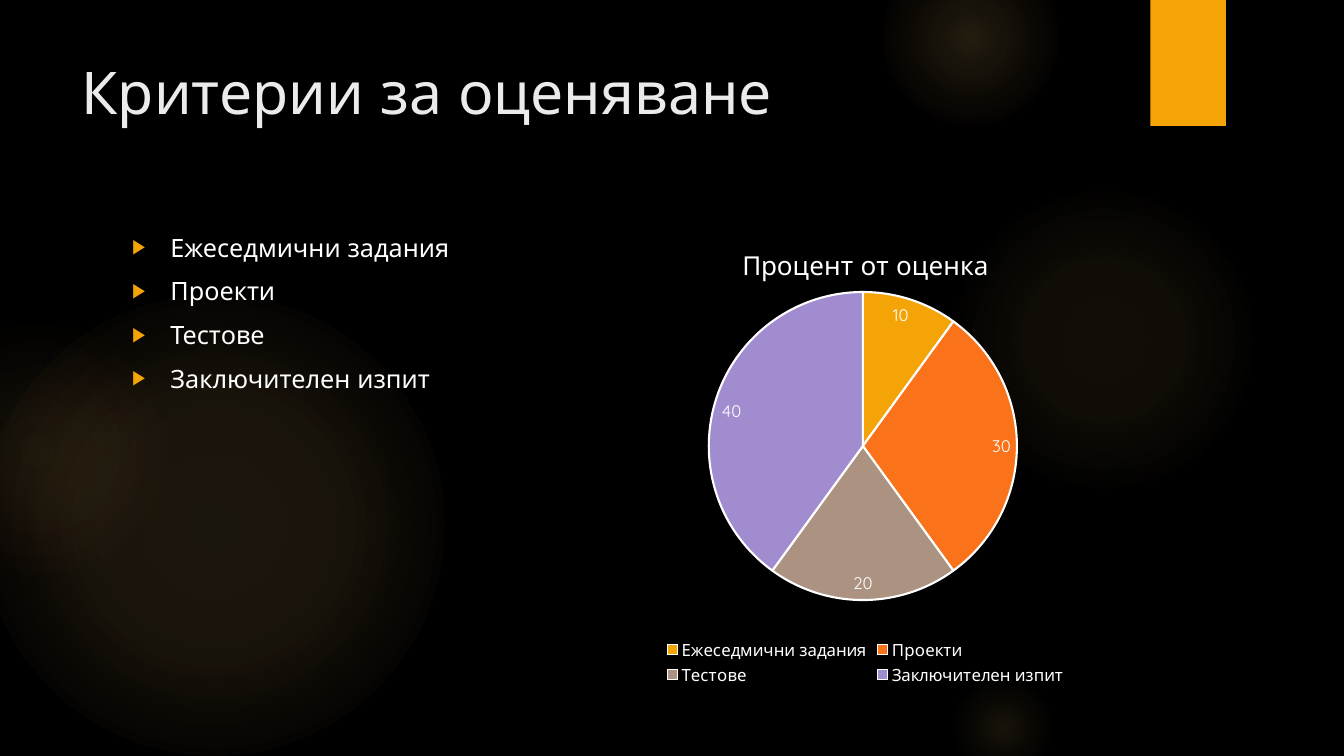
from dataclasses import dataclass
from typing import Any

from pptx import Presentation
from pptx import util as u
from pptx.chart.data import CategoryChartData
from pptx.dml.color import RGBColor
from pptx.enum import chart as charts, shapes, text
from pptx.oxml import parse_xml
from pptx.oxml.ns import nsdecls, qn

FONT = "Quicksand"
AMBER, GLOW, PEACH, WHITE = "F5A408", "FAC96A", "F59B74", "FFFFFF"
HEADING = "Процент от оценка"


@dataclass(frozen=True)
class Halo:
    left: float
    top: float
    size: float
    centre_alpha: int
    middle: int
    middle_alpha: int
    edge: int
    edge_colour: str = GLOW


@dataclass(frozen=True)
class Criterion:
    name: str
    percent: int
    colour: str


HALOS = [
    Halo(-0.17, 2.92, 4.58, 11, 36, 10, 75),
    Halo(-0.92, 3.17, 2.58, 8, 36, 5, 71, PEACH),
    Halo(9.41, 1.83, 3.08, 7, 36, 6, 69),
    Halo(8.75, -0.5, 1.75, 14, 36, 7, 73),
    Halo(9.41, 6.67, 1.08, 10, 31, 5, 66),
]
CRITERIA = [
    Criterion("Ежеседмични задания", 10, AMBER),
    Criterion("Проекти", 30, "FA731A"),
    Criterion("Тестове", 20, "AB9281"),
    Criterion("Заключителен изпит", 40, "A18CD0"),
]


def set_values(target: Any, values: dict[str, Any]) -> None:
    for name, value in values.items():
        setattr(target, name, value)


def paint(fill: Any, colour: str) -> None:
    fill.solid()
    fill.fore_color.rgb = RGBColor.from_string(colour)


def style_font(font: Any, size: float, colour: str = WHITE) -> None:
    set_values(font, {"name": FONT, "size": u.Pt(size), "bold": False})
    paint(font.fill, colour)


def place(left: float, top: float, width: float, height: float) -> dict[str, Any]:
    sides = {"left": left, "top": top, "width": width, "height": height}
    return {name: u.Inches(value) for name, value in sides.items()}


def add_backdrop(page: Any, kind: Any, box: dict[str, Any], colour: str) -> Any:
    shape = page.shapes.add_shape(kind, **box)
    shape.shadow.inherit = False
    shape.line.fill.background()
    paint(shape.fill, colour)
    page.shapes.title.element.addprevious(shape.element)
    return shape


def add_halo(page: Any, halo: Halo) -> None:
    box = place(halo.left, halo.top, halo.size, halo.size)
    shape = add_backdrop(page, shapes.MSO_SHAPE.OVAL, box, GLOW)
    stops = [
        (0, GLOW, halo.centre_alpha),
        (halo.middle, GLOW, halo.middle_alpha),
        (halo.edge, halo.edge_colour, 0),
    ]
    stop_xml = "".join(
        f'<a:gs pos="{position * 1000}"><a:srgbClr val="{colour}">'
        f'<a:alpha val="{alpha * 1000}"/></a:srgbClr></a:gs>'
        for position, colour, alpha in stops
    )
    gradient = parse_xml(
        f'<a:gradFill {nsdecls("a")} rotWithShape="1"><a:gsLst>{stop_xml}</a:gsLst>'
        '<a:path path="circle"><a:fillToRect l="50000" t="50000" r="50000" b="50000"/>'
        "</a:path></a:gradFill>"
    )
    properties = shape.element.spPr
    properties.replace(properties.find(qn("a:solidFill")), gradient)


def add_ribbon(page: Any) -> None:
    box = place(11.41, 0, 0.75, 1.25)
    ribbon = add_backdrop(page, shapes.MSO_SHAPE.RECTANGLE, box, AMBER)
    ribbon.element.spPr.find(qn("a:effectLst")).append(parse_xml(
        f'<a:outerShdw {nsdecls("a")} blurRad="{u.Pt(3)}" dist="{u.Pt(2)}" dir="5400000">'
        '<a:srgbClr val="000000"><a:alpha val="45000"/></a:srgbClr></a:outerShdw>'
    ))


def fill_placeholder(box: Any, area: dict[str, Any], lines: list[str], size: float,
                     colour: str, space_after: float) -> None:
    set_values(box, area)
    frame = box.text_frame
    frame.text = "\n".join(lines)
    set_values(frame, {
        "word_wrap": True,
        "auto_size": text.MSO_AUTO_SIZE.NONE,
        "vertical_anchor": text.MSO_ANCHOR.TOP,
    })
    for para in frame.paragraphs:
        set_values(para, {"alignment": text.PP_ALIGN.LEFT, "space_after": u.Pt(space_after)})
        for span in para.runs:
            style_font(span.font, size, colour)


def add_bullets(box: Any) -> None:
    indent = u.Inches(0.38)
    for properties in box.element.iter(qn("a:pPr")):
        properties.set("marL", str(indent))
        properties.set("indent", str(-indent))
        for markup in (
            f'<a:buClr {nsdecls("a")}><a:srgbClr val="{AMBER}"/></a:buClr>',
            f'<a:buSzPct {nsdecls("a")} val="80000"/>',
            f'<a:buFont {nsdecls("a")} typeface="Arial"/>',
            f'<a:buChar {nsdecls("a")} char="▶"/>',
        ):
            properties.append(parse_xml(markup))


def set_plot_layout(chart: Any) -> None:
    area = chart.element.find(f'.//{qn("c:plotArea")}')
    for layout in area.findall(qn("c:layout")):
        area.remove(layout)
    sizes = {"x": 0.176, "y": 0.141, "w": 0.637, "h": 0.666}
    modes = '<c:xMode val="edge"/><c:yMode val="edge"/>'
    numbers = "".join(f'<c:{side} val="{size}"/>' for side, size in sizes.items())
    area.insert(0, parse_xml(
        f'<c:layout {nsdecls("c")}><c:manualLayout><c:layoutTarget val="inner"/>'
        f"{modes}{numbers}</c:manualLayout></c:layout>"
    ))


def add_pie(page: Any) -> None:
    data = CategoryChartData()
    data.categories = [criterion.name for criterion in CRITERIA]
    data.add_series(HEADING, [criterion.percent for criterion in CRITERIA])
    box = place(6.18, 2.25, 4.81, 4.59)
    frame = page.shapes.add_chart(
        charts.XL_CHART_TYPE.PIE, box["left"], box["top"], box["width"], box["height"], data
    )
    chart = frame.chart
    style_font(chart.font, 10)
    set_values(chart, {"has_title": True, "has_legend": True})
    title = chart.chart_title
    title.include_in_layout = False
    title.text_frame.text = HEADING
    style_font(title.text_frame.paragraphs[0].runs[0].font, 18.6)
    set_values(chart.legend, {
        "position": charts.XL_LEGEND_POSITION.BOTTOM,
        "include_in_layout": False,
    })
    style_font(chart.legend.font, 12)
    chart.plots[0].vary_by_categories = True
    series = chart.plots[0].series[0]
    for index, criterion in enumerate(CRITERIA):
        slice_format = series.points[index].format
        paint(slice_format.fill, criterion.colour)
        paint(slice_format.line.fill, WHITE)
        slice_format.line.width = u.Pt(1.5)
    set_values(series.data_labels, {
        "show_value": True,
        "show_percentage": False,
        "position": charts.XL_LABEL_POSITION.INSIDE_END,
    })
    style_font(series.data_labels.font, 12)
    set_plot_layout(chart)


def main() -> None:
    deck = Presentation()
    set_values(deck, {"slide_width": u.Inches(13.33), "slide_height": u.Inches(7.5)})
    page = deck.slides.add_slide(deck.slide_layouts[1])
    paint(page.background.fill, "000000")
    for halo in HALOS:
        add_halo(page, halo)
    add_ribbon(page)
    fill_placeholder(page.shapes.title, place(0.71, 0.5, 10.29, 1.53),
                     ["Критерии за оценяване"], 42, "EBEBEB", 0)
    body = page.placeholders[1]
    fill_placeholder(body, place(1.21, 2.25, 4.81, 4.59),
                     [criterion.name for criterion in CRITERIA], 18, WHITE, 6)
    add_bullets(body)
    add_pie(page)
    deck.save("out.pptx")


if __name__ == "__main__":
    main()
